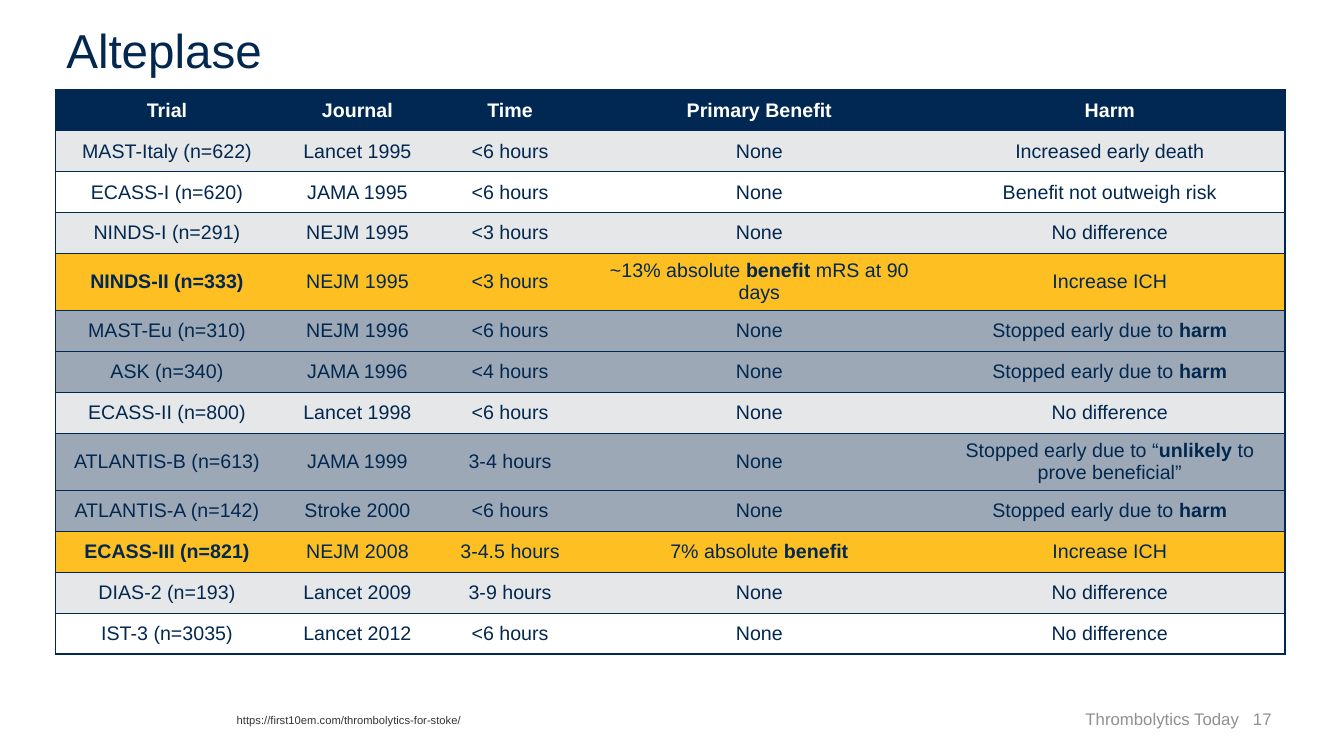
from lxml.etree import SubElement
from pptx import Presentation
from pptx.dml.color import RGBColor
from pptx.enum.text import MSO_ANCHOR, PP_ALIGN
from pptx.oxml.ns import qn
from pptx.util import Pt

NAVY = RGBColor(0x00, 0x28, 0x53)
INK = RGBColor(0x02, 0x28, 0x50)
WHITE = RGBColor(0xFF, 0xFF, 0xFF)
PALE = RGBColor(0xE6, 0xE7, 0xE9)
SLATE = RGBColor(0x9C, 0xA8, 0xB6)
GOLD = RGBColor(0xFE, 0xBF, 0x23)
GRAY = RGBColor(0x90, 0x90, 0x90)
CHARCOAL = RGBColor(0x34, 0x34, 0x34)

COLUMN_WIDTHS = [159.8, 112.3, 105.8, 250.3, 250.3]
ROW_HEIGHT = 29.2

TRIALS = [
    (NAVY, "*Trial*", "*Journal*", "*Time*", "*Primary Benefit*", "*Harm*"),
    (PALE, "MAST-Italy (n=622)", "Lancet 1995", "<6 hours", "None", "Increased early death"),
    (WHITE, "ECASS-I (n=620)", "JAMA 1995", "<6 hours", "None", "Benefit not outweigh risk"),
    (PALE, "NINDS-I (n=291)", "NEJM 1995", "<3 hours", "None", "No difference"),
    (GOLD, "*NINDS-II (n=333)*", "NEJM 1995", "<3 hours",
     "~13% absolute *benefit* mRS at 90 days", "Increase ICH"),
    (SLATE, "MAST-Eu (n=310)", "NEJM 1996", "<6 hours", "None", "Stopped early due to *harm*"),
    (SLATE, "ASK (n=340)", "JAMA 1996", "<4 hours", "None", "Stopped early due to *harm*"),
    (PALE, "ECASS-II (n=800)", "Lancet 1998", "<6 hours", "None", "No difference"),
    (SLATE, "ATLANTIS-B (n=613)", "JAMA 1999", "3-4 hours", "None",
     "Stopped early due to “*unlikely* to prove beneficial”"),
    (SLATE, "ATLANTIS-A (n=142)", "Stroke 2000", "<6 hours", "None", "Stopped early due to *harm*"),
    (GOLD, "*ECASS-III (n=821)*", "NEJM 2008", "3-4.5 hours", "7% absolute *benefit*", "Increase ICH"),
    (PALE, "DIAS-2 (n=193)", "Lancet 2009", "3-9 hours", "None", "No difference"),
    (WHITE, "IST-3 (n=3035)", "Lancet 2012", "<6 hours", "None", "No difference"),
]


def write(para, text, size, color, align):
    para.alignment = align
    for index, part in enumerate(text.split("*")):
        if part:
            span = para.add_run()
            span.text = part
            span.font.name = "Arial"
            span.font.size = Pt(size)
            span.font.bold = index % 2 == 1
            span.font.color.rgb = color


def draw_borders(cell, visible):
    properties = cell._tc.get_or_add_tcPr()
    for side in ("lnL", "lnR", "lnT", "lnB"):
        line = SubElement(properties, qn(f"a:{side}"), w=str(Pt(1)))
        if side in visible:
            fill = SubElement(line, qn("a:solidFill"))
            SubElement(fill, qn("a:srgbClr"), val=str(NAVY))
        else:
            SubElement(line, qn("a:noFill"))


deck = Presentation()
deck.slide_width = Pt(960)
deck.slide_height = Pt(540)
page = deck.slides.add_slide(deck.slide_layouts[6])

labels = [
    ("Alteplase", 40.3, 24.5, 720, 35.3, 34, INK, PP_ALIGN.LEFT, MSO_ANCHOR.BOTTOM, 0.9),
    ("https://first10em.com/thrombolytics-for-stoke/", 162, 506.2, 365.8, 17,
     8, CHARCOAL, PP_ALIGN.LEFT, MSO_ANCHOR.TOP, 1.0),
    ("Thrombolytics Today", 548, 500.4, 344.2, 23.8, 12, GRAY, PP_ALIGN.RIGHT, MSO_ANCHOR.BOTTOM, 0.9),
    ("17", 880, 500.4, 35.4, 23.8, 12, GRAY, PP_ALIGN.RIGHT, MSO_ANCHOR.BOTTOM, 0.9),
]
for text, left, top, width, height, size, color, align, anchor, spacing in labels:
    box = page.shapes.add_textbox(Pt(left), Pt(top), Pt(width), Pt(height))
    frame = box.text_frame
    frame.word_wrap = True
    frame.vertical_anchor = anchor
    frame.paragraphs[0].line_spacing = spacing
    write(frame.paragraphs[0], text, size, color, align)

table = page.shapes.add_table(
    len(TRIALS), len(COLUMN_WIDTHS), Pt(39.4), Pt(64.3),
    Pt(sum(COLUMN_WIDTHS)), Pt(ROW_HEIGHT * len(TRIALS))).table
table.first_row = False
table.horz_banding = False
for column, width in zip(table.columns, COLUMN_WIDTHS):
    column.width = Pt(width)

for row, (background, *texts) in zip(table.rows, TRIALS):
    row.height = Pt(ROW_HEIGHT)
    for index, (cell, text) in enumerate(zip(row.cells, texts)):
        visible = ["lnT", "lnB"]
        if index == 0:
            visible.append("lnL")
        if index == len(texts) - 1:
            visible.append("lnR")
        draw_borders(cell, visible)
        cell.fill.solid()
        cell.fill.fore_color.rgb = background
        cell.vertical_anchor = MSO_ANCHOR.MIDDLE
        color = WHITE if background == NAVY else INK
        write(cell.text_frame.paragraphs[0], text, 14, color, PP_ALIGN.CENTER)

deck.save("out.pptx")
